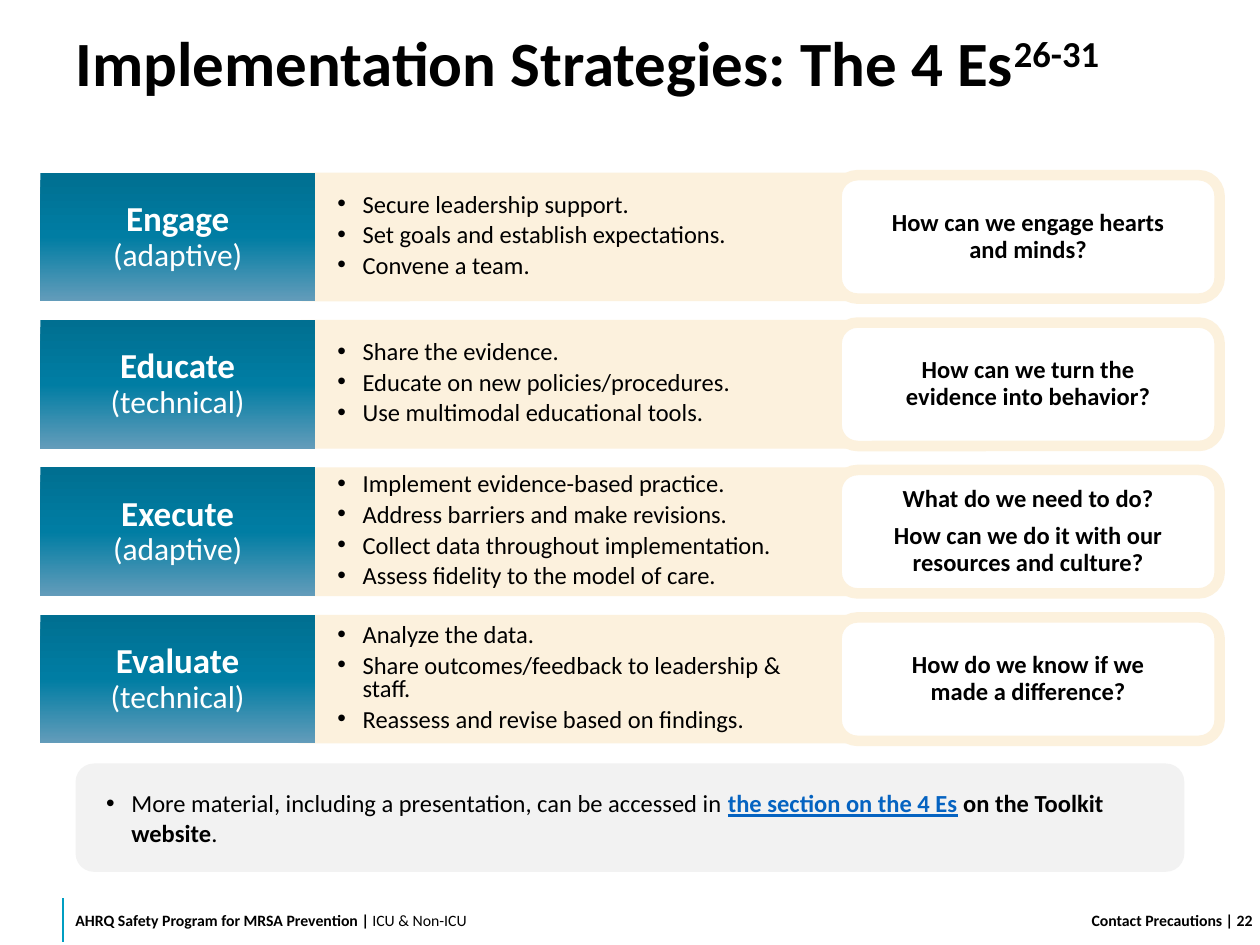
from copy import deepcopy
from dataclasses import dataclass

from lxml import etree
from pptx import Presentation
from pptx.dml.color import RGBColor
from pptx.enum.shapes import MSO_CONNECTOR, MSO_SHAPE
from pptx.enum.text import MSO_ANCHOR, PP_ALIGN
from pptx.oxml.ns import qn
from pptx.util import Inches, Pt

RECT, ROUND = MSO_SHAPE.RECTANGLE, MSO_SHAPE.ROUNDED_RECTANGLE
LINE = MSO_CONNECTOR.STRAIGHT
LEFT, MID, RIGHT = PP_ALIGN.LEFT, PP_ALIGN.CENTER, PP_ALIGN.RIGHT
MIDDLE = MSO_ANCHOR.MIDDLE


@dataclass(frozen=True)
class Theme:
    font: str = "Calibri"
    ink: str = "000000"
    white: str = "FFFFFF"
    cream: str = "FCF1DD"
    grey: str = "F2F2F2"
    rule: str = "009EC2"
    link: str = "0563C1"
    blues: tuple = ((0, "006F91"), (0.5, "007DA3"), (1, "639CBA"))
    title: int = 36
    head: int = 20
    sub: int = 18
    body: int = 14
    foot: int = 9


@dataclass(frozen=True)
class Area:
    """A place on the grid: columns and rows from the top left."""
    col: float
    row: float
    cols: float
    rows: float


@dataclass(frozen=True)
class Span:
    text: str
    size: int
    bold: bool = False
    color: str = "000000"
    under: bool = False
    lift: int = 0


@dataclass(frozen=True)
class Style:
    pads: tuple
    align: PP_ALIGN = LEFT
    lead: float = 1.0
    before: float = 0
    after: float = 0
    bullet: bool = False


@dataclass(frozen=True)
class Stage:
    name: str
    kind: str
    steps: tuple
    asks: tuple


THEME = Theme()
COLS, ROWS = 100, 75
UNIT = Inches(0.1)

STAGES = (
    Stage("Engage", "(adaptive)",
          ("Secure leadership support.",
           "Set goals and establish expectations.",
           "Convene a team."),
          ("How can we engage hearts and minds?",)),
    Stage("Educate", "(technical)",
          ("Share the evidence.",
           "Educate on new policies/procedures.",
           "Use multimodal educational tools."),
          ("How can we turn the evidence into behavior?",)),
    Stage("Execute", "(adaptive)",
          ("Implement evidence-based practice.",
           "Address barriers and make revisions.",
           "Collect data throughout implementation.",
           "Assess fidelity to the model of care."),
          ("What do we need to do?",
           "How can we do it with our resources and culture?")),
    Stage("Evaluate", "(technical)",
          ("Analyze the data.",
           "Share outcomes/feedback to leadership & staff.",
           "Reassess and revise based on findings."),
          ("How do we know if we made a difference?",)),
)
TOP, PITCH = 13.7, 11.7

STEP = Style((0.4, 0.06, 0.5, 0.06), lead=0.8, before=2, after=2, bullet=True)
ASK = Style((0.3, 0.2, 0.3, 0.2), MID, lead=0.9, after=6)
LABEL = Style((0.3, 0.2, 0.3, 0.2), MID, lead=0.9)
NOTE = Style((0.2, 0.15, 0.2, 0.15), bullet=True)
TITLE = Style((0.1, 0.1, 0.1, 0.05), lead=0.9)
FOOT = Style((0.1, 0, 0.1, 0))
TOPIC = Style((0.1, 0.05, 0, 0.05), RIGHT)
PAGE = Style((0, 0.05, 0, 0.05))


def rgb(code: str) -> RGBColor:
    return RGBColor.from_string(code)


def place(area: Area) -> list:
    return [round(n * UNIT) for n in (area.col, area.row, area.cols, area.rows)]


def write(shape, paras: list, style: Style) -> None:
    """Fill a shape with paragraphs, each a list of spans."""
    frame = shape.text_frame
    frame.word_wrap = True
    frame.vertical_anchor = MIDDLE
    (frame.margin_left, frame.margin_top,
     frame.margin_right, frame.margin_bottom) = map(Inches, style.pads)
    for i, spans in enumerate(paras):
        para = frame.add_paragraph() if i else frame.paragraphs[0]
        if style.bullet:
            props = para._p.get_or_add_pPr()
            props.set("marL", str(Inches(0.2)))
            props.set("indent", str(-Inches(0.2)))
            etree.SubElement(props, qn("a:buFont"), typeface="Arial")
            etree.SubElement(props, qn("a:buChar"), char="•")
        para.alignment = style.align
        para.line_spacing = style.lead
        para.space_before = Pt(style.before if i else 0)
        para.space_after = Pt(style.after)
        for span in spans:
            run = para.add_run()
            run.text = span.text
            font = run.font
            font.name, font.size = THEME.font, Pt(span.size)
            font.bold, font.underline = span.bold, span.under
            font.color.rgb = rgb(span.color)
            if span.lift:
                run._r.get_or_add_rPr().set("baseline", str(span.lift * 1000))


def block(slide, kind, area: Area, fill: str = "", edge: str = "",
          width: float = 0, curve: float = 0.17):
    shape = slide.shapes.add_shape(kind, *place(area))
    shape.shadow.inherit = False
    if kind == ROUND:
        shape.adjustments[0] = curve
    if fill:
        shape.fill.solid()
        shape.fill.fore_color.rgb = rgb(fill)
    else:
        blend(shape)
    if edge:
        shape.line.color.rgb = rgb(edge)
        shape.line.width = Pt(width)
    else:
        shape.line.fill.background()
    return shape


def blend(shape) -> None:
    """Shade from dark at the top to light at the bottom."""
    fill = shape.fill
    fill.gradient()
    fill.gradient_angle = 270
    stops = next(shape._element.spPr.iter(qn("a:gsLst")))
    stops.append(deepcopy(stops[0]))
    for stop, (spot, code) in zip(fill.gradient_stops, THEME.blues):
        stop.position = spot
        stop.color.rgb = rgb(code)


def label(slide, area: Area, spans: list, style: Style) -> None:
    write(slide.shapes.add_textbox(*place(area)), [spans], style)


def draw_stage(slide, stage: Stage, row: float) -> None:
    panel = block(slide, ROUND, Area(22.3, row + 0.2, 48.6, 9.8),
                  THEME.cream, THEME.cream, 3)
    write(panel, [[Span(s, THEME.body)] for s in stage.steps], STEP)
    card = block(slide, ROUND, Area(66.4, row + 0.2, 30.4, 9.8),
                 THEME.white, THEME.cream, 6)
    write(card, [[Span(a, THEME.body, True)] for a in stage.asks], ASK)
    tab = block(slide, RECT, Area(3.2, row, 21.8, 10.2))
    write(tab, [[Span(stage.name + " ", THEME.head, True, THEME.white),
                 Span(stage.kind, THEME.sub, False, THEME.white)]], LABEL)


def draw_foot(slide) -> None:
    size = THEME.foot
    label(slide, Area(5, 71, 41, 4),
          [Span("AHRQ Safety Program for MRSA Prevention | ", size, True),
           Span("ICU & Non-ICU", size)], FOOT)
    x, y, _, tall = place(Area(5, 71.3, 0, 3.5))
    rule = slide.shapes.add_connector(LINE, x, y, x, y + tall)
    rule.line.color.rgb = rgb(THEME.rule)
    rule.line.width = Pt(1)
    etree.SubElement(rule._element.spPr, qn("a:effectLst"))
    label(slide, Area(71, 71, 26, 4),
          [Span("Contact Precautions", size, True)], TOPIC)
    label(slide, Area(97, 71, 3, 4), [Span(" | 22", size, True)], PAGE)


def main() -> None:
    deck = Presentation()
    deck.slide_width, deck.slide_height = COLS * UNIT, ROWS * UNIT
    slide = deck.slides.add_slide(deck.slide_layouts[6])

    # Title
    label(slide, Area(5, 0, 90, 10),
          [Span("Implementation Strategies: The 4 Es", THEME.title, True),
           Span("26-31", THEME.title, True, lift=30)], TITLE)

    # Four stages
    for i, stage in enumerate(STAGES):
        draw_stage(slide, stage, TOP + i * PITCH)

    # Note
    size = THEME.body
    note = block(slide, ROUND, Area(6, 60.6, 88, 8.6), THEME.grey)
    write(note, [[
        Span("More material, including a presentation, can be accessed in ", size),
        Span("the section on the 4 Es", size, True, THEME.link, True),
        Span(" on the Toolkit website", size, True),
        Span(".", size)]], NOTE)

    # Footer
    draw_foot(slide)
    deck.save("out.pptx")


if __name__ == "__main__":
    main()
